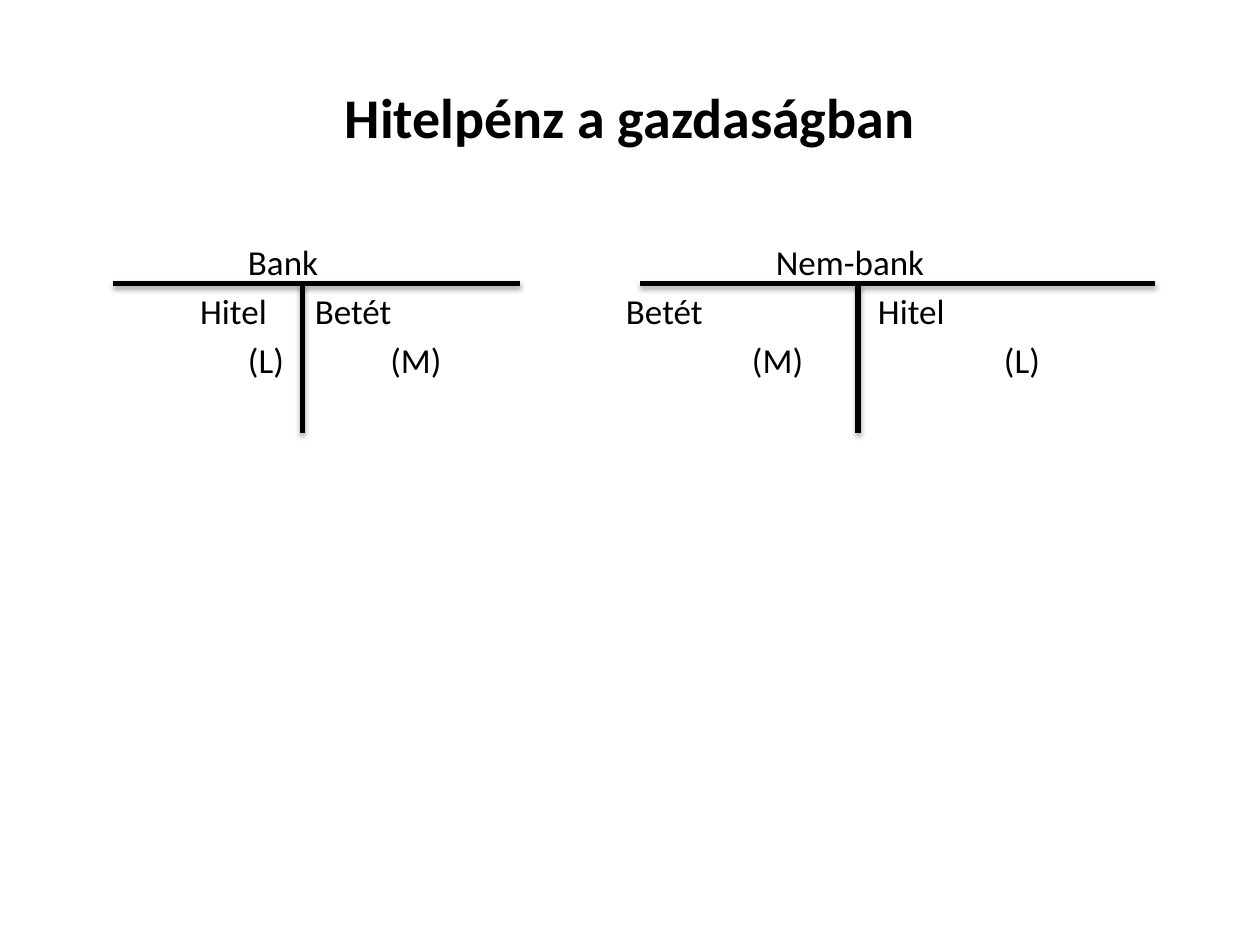
from lxml.etree import SubElement
from pptx import Presentation
from pptx.dml.color import RGBColor
from pptx.enum.shapes import MSO_CONNECTOR as Connector
from pptx.enum.text import MSO_ANCHOR as Anchor, PP_ALIGN as Align
from pptx.oxml.ns import qn
from pptx.util import Inches, Pt


def color(value):
    return RGBColor.from_string(value)


class AccountSlide:
    FONT = "Calibri"
    INK = "000000"
    INSET = 0.1
    SHADOW = {"blurRad": Pt(3.1), "dist": Pt(1.8), "dir": 90 * 60000, "rotWithShape": 0}

    def __init__(self, deck):
        self.page = deck.slides.add_slide(deck.slide_layouts[6])

    def frame(self, left, top, width, height, anchor):
        box = self.page.shapes.add_textbox(*map(Inches, (left, top, width, height)))
        text = box.text_frame
        text.word_wrap = True
        text.vertical_anchor = anchor
        return text

    def add_words(self, para, words, **extra):
        span = para.add_run()
        span.text = words
        values = {"name": self.FONT, **extra}
        for name, value in values.items():
            setattr(span.font, name, value)
        span.font.color.rgb = color(self.INK)

    def title(self, words):
        para = self.frame(0.5, 0.3, 9, 1.25, Anchor.MIDDLE).paragraphs[0]
        para.alignment = Align.CENTER
        self.add_words(para, words, size=Pt(32), bold=True)

    def entries(self, left, top, width, height, rows):
        """Set one paragraph per row, each entry at its own tab stop."""
        text = self.frame(left, top, width, height, Anchor.TOP)
        for number, row in enumerate(rows):
            para = text.add_paragraph() if number else text.paragraphs[0]
            if number:
                para.space_before = Pt(4)
            stops = SubElement(para._p.get_or_add_pPr(), qn("a:tabLst"))
            for place, _ in row:
                stop = Inches(place - left - self.INSET)
                SubElement(stops, qn("a:tab"), pos=str(stop), algn="l")
            self.add_words(para, "".join("\t" + words for _, words in row), size=Pt(20))

    def line(self, *ends):
        rule = self.page.shapes.add_connector(Connector.STRAIGHT, *map(Inches, ends))
        rule.line.color.rgb = color(self.INK)
        rule.line.width = Pt(3)
        effects = SubElement(rule._element.spPr, qn("a:effectLst"))
        shadow = SubElement(effects, qn("a:outerShdw"))
        for name, value in self.SHADOW.items():
            shadow.set(name, str(value))
        tint = SubElement(shadow, qn("a:srgbClr"), val=self.INK)
        SubElement(tint, qn("a:alpha"), val="35000")

    def account(self, left, right, stem, top=2.25, bottom=3.44):
        """Draw the T of a T-account."""
        self.line(left, top, right, top)
        self.line(stem, top, stem, bottom)


def main():
    deck = Presentation()
    deck.slide_width, deck.slide_height = Inches(10), Inches(7.5)
    slide = AccountSlide(deck)
    slide.title("Hitelpénz a gazdaságban")
    slide.entries(0.5, 1.86, 9, 4.84, [
        [(1.97, "Bank"), (6.16, "Nem-bank")],
        [(1.59, "Hitel"), (2.5, "Betét"), (4.97, "Betét"), (6.97, "Hitel")],
        [(1.97, "(L)"), (3.1, "(M)"), (5.97, "(M)"), (7.97, "(L)")],
    ])
    slide.account(0.9, 4.13, stem=2.4)
    slide.account(5.08, 9.17, stem=6.81)
    deck.save("out.pptx")


if __name__ == "__main__":
    main()
